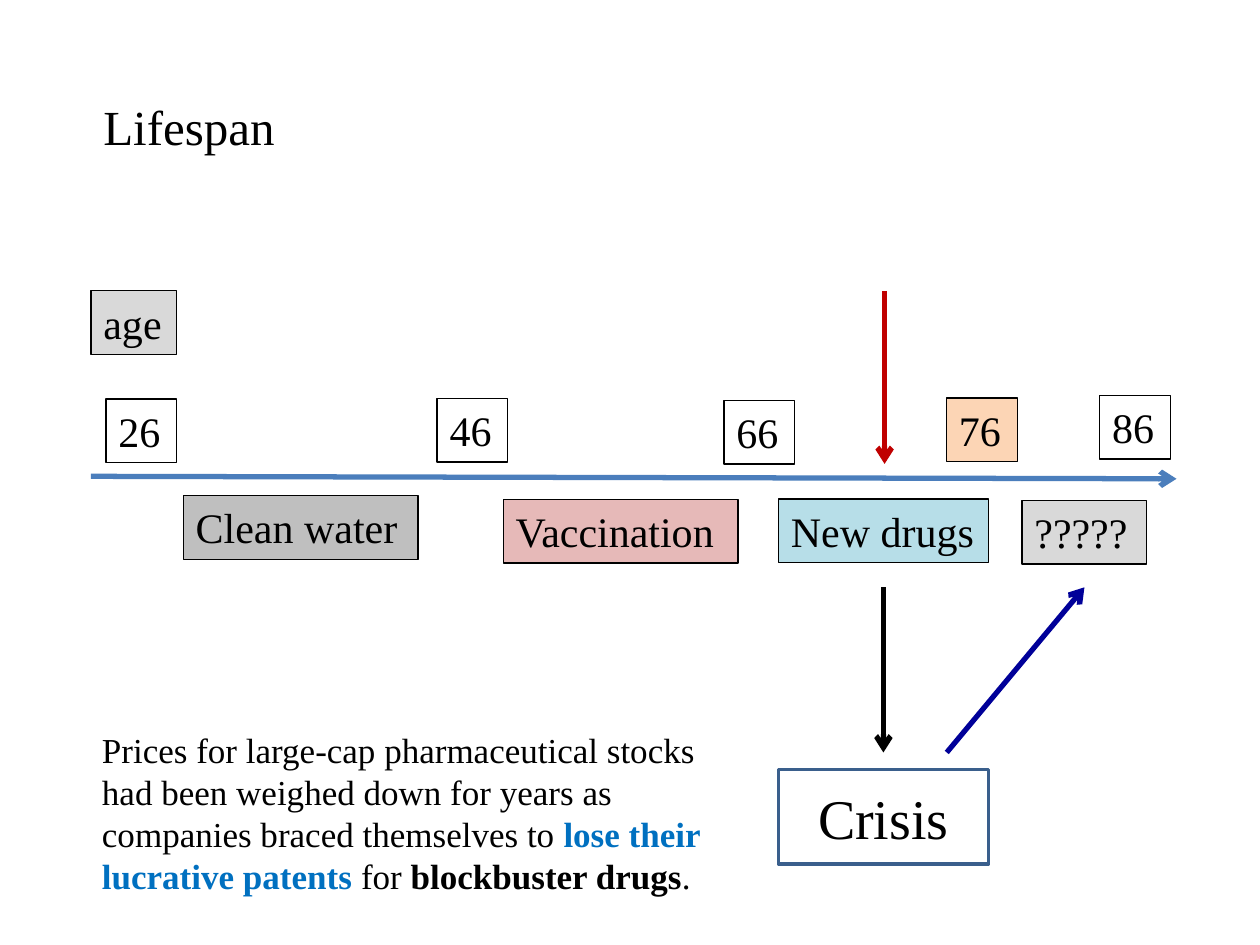
from lxml import etree
from pptx import Presentation
from pptx import util as u
from pptx.dml.color import RGBColor
from pptx.enum import shapes, text
from pptx.oxml.ns import qn

FONT = "Times New Roman"
BLACK = RGBColor(0x00, 0x00, 0x00)
LIGHT_GREY = RGBColor(0xD9, 0xD9, 0xD9)
GREY = RGBColor(0xBF, 0xBF, 0xBF)
PEACH = RGBColor(0xFC, 0xD5, 0xB5)
PINK = RGBColor(0xE6, 0xB9, 0xB8)
AQUA = RGBColor(0xB7, 0xDE, 0xE8)
AXIS_BLUE = RGBColor(0x4B, 0x7E, 0xBC)
FRAME_BLUE = RGBColor(0x3A, 0x5F, 0x8C)
NAVY = RGBColor(0x00, 0x00, 0x99)
RED = RGBColor(0xC0, 0x00, 0x00)
LINK_BLUE = RGBColor(0x00, 0x70, 0xC0)

# Content: runs are (text, colour, bold)
TITLE = [("Lifespan", BLACK, False)]
NOTE = [
    ("Prices for large-cap pharmaceutical stocks had been weighed down for "
     "years as companies braced themselves to ", BLACK, False),
    ("lose their lucrative patents ", LINK_BLUE, True),
    ("for ", BLACK, False),
    ("blockbuster drugs", BLACK, True),
    (".", BLACK, False),
]

# Labels: text, left, top, width, fill
LABEL_HEIGHT = 36.35
AGE_WIDTH = 40.4
LABELS = [
    ("age", 52, 166.2, 48.9, LIGHT_GREY),
    ("26", 60.6, 228, AGE_WIDTH, None),
    ("46", 249.8, 227.8, AGE_WIDTH, None),
    ("66", 413.7, 228.8, AGE_WIDTH, None),
    ("76", 540.9, 227.4, AGE_WIDTH, PEACH),
    ("86", 628.4, 226, AGE_WIDTH, None),
    ("Clean water", 104.8, 283.3, 134.2, GREY),
    ("Vaccination", 287.6, 285.4, 134.2, PINK),
    ("New drugs", 444.8, 285.2, 120, AQUA),
    ("?????", 584, 286, 71, LIGHT_GREY),
]

# Arrows: start x, start y, end x, end y, colour
ARROWS = [
    (52, 272.2, 672.3, 273.6, AXIS_BLUE),
    (504.8, 335.6, 504.8, 430, BLACK),
    (541, 430, 619.7, 335.6, NAVY),
    (505.5, 166.2, 505.5, 265.1, RED),
]

deck = Presentation()
deck.slide_width, deck.slide_height = u.Pt(720), u.Pt(540)
page = deck.slides.add_slide(deck.slide_layouts[6])


def write(box, runs, size, align=text.PP_ALIGN.LEFT, anchor=text.MSO_ANCHOR.TOP, wrap=True):
    frame = box.text_frame
    frame.word_wrap = wrap
    frame.vertical_anchor = anchor
    para = frame.paragraphs[0]
    para.alignment = align
    for words, colour, bold in runs:
        span = para.add_run()
        span.text = words
        span.font.name = FONT
        span.font.size = u.Pt(size)
        span.font.bold = bold
        span.font.color.rgb = colour


def add_text(left, top, width, height, runs, size):
    box = page.shapes.add_textbox(u.Pt(left), u.Pt(top), u.Pt(width), u.Pt(height))
    write(box, runs, size)


def add_box(left, top, width, height, fill, line, weight):
    box = page.shapes.add_shape(shapes.MSO_SHAPE.RECTANGLE,
                                u.Pt(left), u.Pt(top), u.Pt(width), u.Pt(height))
    box.shadow.inherit = False
    if fill is None:
        box.fill.background()
    else:
        box.fill.solid()
        box.fill.fore_color.rgb = fill
    box.line.color.rgb = line
    box.line.width = u.Pt(weight)
    return box


def add_arrow(x1, y1, x2, y2, colour):
    arrow = page.shapes.add_connector(shapes.MSO_CONNECTOR.STRAIGHT,
                                      u.Pt(x1), u.Pt(y1), u.Pt(x2), u.Pt(y2))
    arrow.line.color.rgb = colour
    arrow.line.width = u.Pt(3)
    etree.SubElement(arrow.line._get_or_add_ln(), qn("a:tailEnd"), type="arrow")
    etree.SubElement(arrow._element.spPr, qn("a:effectLst"))


# Title
add_text(52, 51.4, 120, 41.2, TITLE, 28)

# Timeline and the other arrows
for arrow_data in ARROWS:
    add_arrow(*arrow_data)

# Ages and causes
for words, left, top, width, fill in LABELS:
    label = add_box(left, top, width, LABEL_HEIGHT, fill, BLACK, 0.75)
    write(label, [(words, BLACK, False)], 24, wrap=False)

# Crisis
crisis = add_box(444.8, 439.8, 120, 54, None, FRAME_BLUE, 2)
write(crisis, [("Crisis", BLACK, False)], 32,
      text.PP_ALIGN.CENTER, text.MSO_ANCHOR.MIDDLE)

# Note
add_text(51.2, 412.6, 357, 104.4, NOTE, 20)

deck.save("out.pptx")
